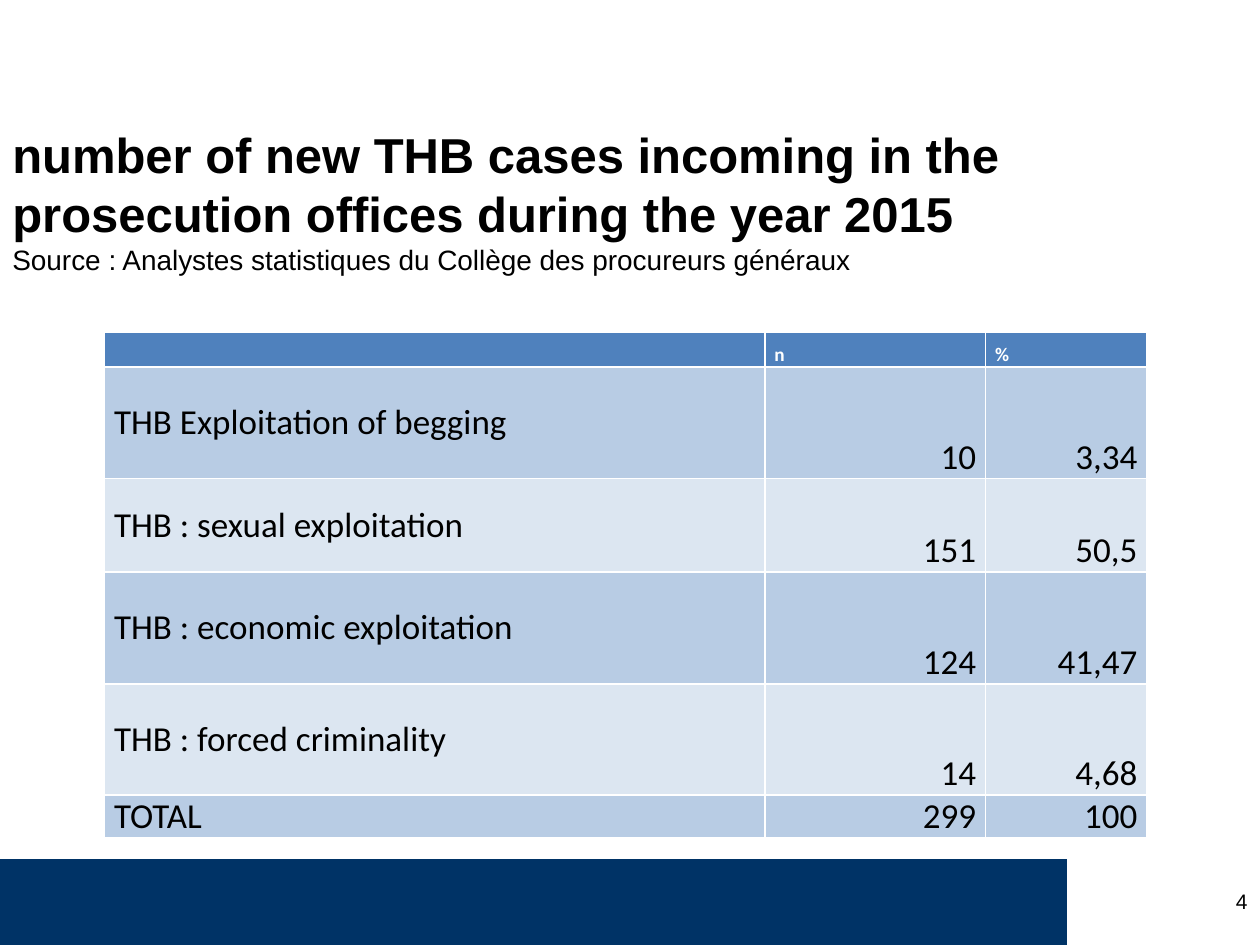
from dataclasses import dataclass
from typing import Any

from lxml.etree import SubElement
from pptx import Presentation
from pptx.dml.color import RGBColor
from pptx.enum.shapes import MSO_SHAPE
from pptx.enum.text import MSO_ANCHOR, PP_ALIGN
from pptx.oxml.ns import qn
from pptx.util import Cm, Pt

COLORS = {
    "ink": "000000",
    "white": "FFFFFF",
    "navy": "003366",
    "header": "4F81BD",
    "dark_band": "B8CCE4",
    "light_band": "DCE6F1",
}
HEADINGS = ["", "n", "%"]
CASES = [
    ["THB Exploitation of begging", "10", "3,34"],
    ["THB : sexual exploitation", "151", "50,5"],
    ["THB : economic exploitation", "124", "41,47"],
    ["THB : forced criminality", "14", "4,68"],
    ["TOTAL", "299", "100"],
]
COLUMN_WIDTHS = [13.31, 4.45, 3.25]
ROW_HEIGHTS = [0.71, 2.25, 1.88, 2.26, 2.24, 0.86]


@dataclass
class SlideBuilder:
    slide: Any
    text_font: str = "Arial"
    table_font: str = "Calibri"

    def color(self, name):
        return RGBColor.from_string(COLORS[name])

    def format_runs(self, paragraph, font, size, color="ink", bold=False):
        for run in paragraph.runs:
            run.font.name = font
            run.font.size = Pt(size)
            run.font.bold = bold
            run.font.color.rgb = self.color(color)

    def bar(self, left, top, width, height, color):
        bar = self.slide.shapes.add_shape(
            MSO_SHAPE.RECTANGLE, Cm(left), Cm(top), Cm(width), Cm(height))
        bar.shadow.inherit = False
        bar.fill.solid()
        bar.fill.fore_color.rgb = self.color(color)
        bar.line.fill.background()

    def text(self, left, top, width, height, lines, align=PP_ALIGN.LEFT,
             anchor=MSO_ANCHOR.TOP, bottom_inset=0.13):
        box = self.slide.shapes.add_textbox(
            Cm(left), Cm(top), Cm(width), Cm(height))
        frame = box.text_frame
        frame.word_wrap = True
        frame.vertical_anchor = anchor
        frame.margin_bottom = Cm(bottom_inset)
        frame.text = "\n".join(line for line, _, _ in lines)
        for paragraph, (_, size, bold) in zip(frame.paragraphs, lines):
            paragraph.alignment = align
            self.format_runs(paragraph, self.text_font, size, bold=bold)

    def border(self, cell, side, width):
        line = SubElement(cell._tc.get_or_add_tcPr(), qn(f"a:{side}"),
                          w=str(Pt(width)))
        fill = SubElement(line, qn("a:solidFill"))
        SubElement(fill, qn("a:srgbClr"), val=COLORS["white"])

    def cell(self, cell, label, fill, align, anchor, size, color, bold):
        cell.margin_left = cell.margin_right = Cm(0.19)
        cell.margin_top = cell.margin_bottom = 0
        cell.vertical_anchor = anchor
        cell.text_frame.text = label
        paragraph = cell.text_frame.paragraphs[0]
        paragraph.alignment = align
        self.format_runs(paragraph, self.table_font, size, color, bold)
        if not label:
            SubElement(paragraph._p, qn("a:endParaRPr"), sz=str(size * 100))
        cell.fill.solid()
        cell.fill.fore_color.rgb = self.color(fill)

    def table(self, left, top, widths, heights, rows):
        table = self.slide.shapes.add_table(
            len(rows), len(widths), Cm(left), Cm(top),
            Cm(sum(widths)), Cm(sum(heights))).table
        for column, width in zip(table.columns, widths):
            column.width = Cm(width)
        for row, height in zip(table.rows, heights):
            row.height = Cm(height)
        last_row, last_column = len(rows) - 1, len(widths) - 1
        for r, labels in enumerate(rows):
            band = "dark_band" if r % 2 else "light_band"
            for c, label in enumerate(labels):
                cell = table.cell(r, c)
                inner_sides = [
                    ("lnL", c > 0, 1),
                    ("lnR", c < last_column, 1),
                    ("lnT", r > 0, 1.5 if r == 1 else 1),
                    ("lnB", r < last_row, 1.5 if r == 0 else 1),
                ]
                for side, inner, width in inner_sides:
                    if inner:
                        self.border(cell, side, width)
                if r == 0:
                    self.cell(cell, label, "header", PP_ALIGN.LEFT,
                              MSO_ANCHOR.BOTTOM, 11, "white", True)
                elif c == 0:
                    self.cell(cell, label, band, PP_ALIGN.JUSTIFY,
                              MSO_ANCHOR.MIDDLE, 20, "ink", False)
                else:
                    self.cell(cell, label, band, PP_ALIGN.RIGHT,
                              MSO_ANCHOR.BOTTOM, 20, "ink", False)


def main():
    presentation = Presentation()
    presentation.slide_width = Cm(25.4)
    presentation.slide_height = Cm(19.05)
    builder = SlideBuilder(
        presentation.slides.add_slide(presentation.slide_layouts[6]))

    builder.bar(-0.02, 17.32, 21.53, 1.75, "navy")
    builder.text(22.86, 17.78, 2.54, 1.27, [("4", 12, False)],
                 align=PP_ALIGN.RIGHT)
    builder.table(2.11, 6.69, COLUMN_WIDTHS, ROW_HEIGHTS, [HEADINGS] + CASES)
    builder.text(0, 2.34, 25, 4.37, [
        ("number of new THB cases incoming in the prosecution offices "
         "during the year 2015", 28, True),
        ("Source : Analystes statistiques du Collège des procureurs généraux",
         16, False),
    ], anchor=MSO_ANCHOR.MIDDLE, bottom_inset=1.1)

    presentation.save("out.pptx")


if __name__ == "__main__":
    main()
